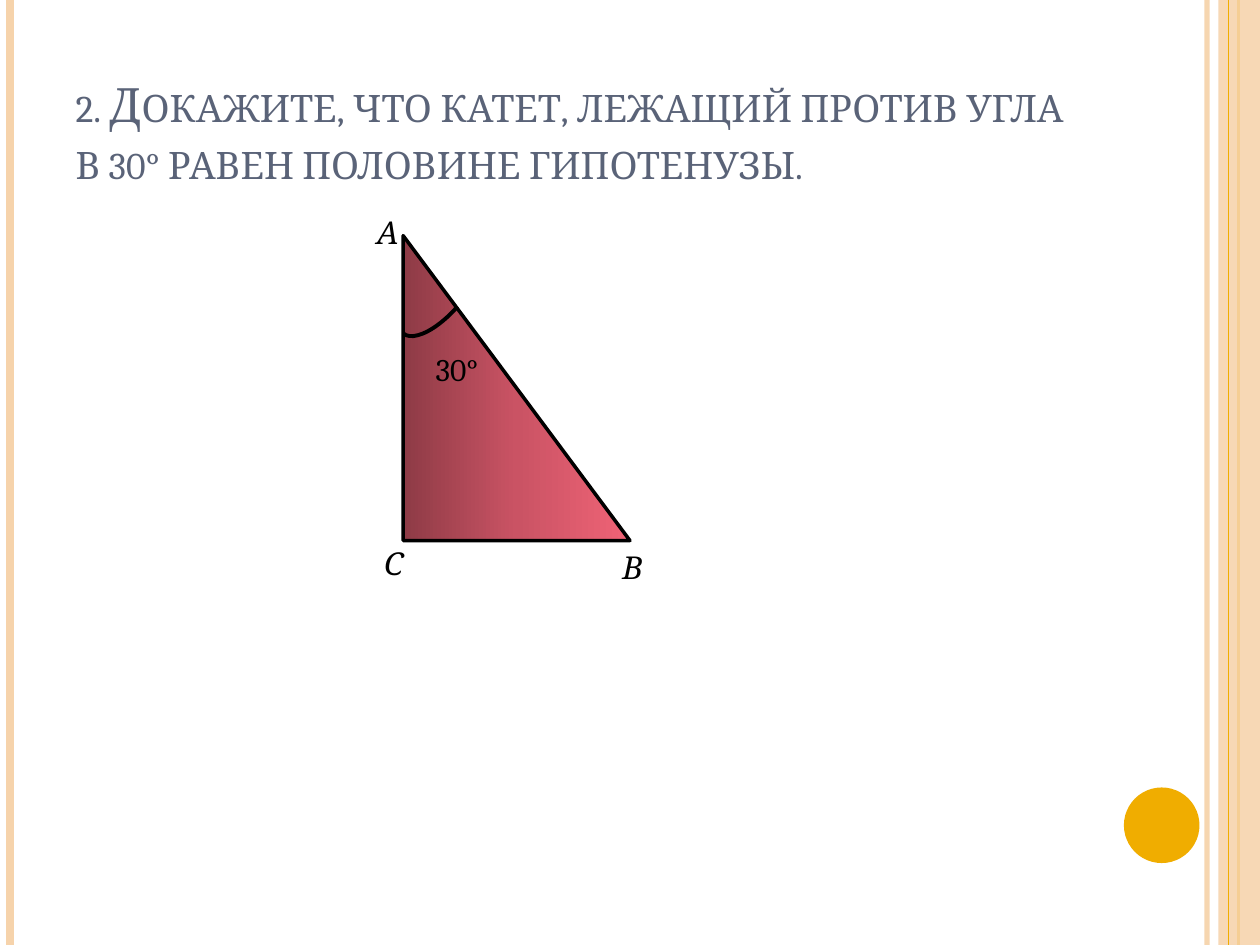
from copy import deepcopy
from dataclasses import dataclass

from lxml import etree
from pptx import Presentation
from pptx.dml.color import RGBColor
from pptx.enum.shapes import MSO_CONNECTOR, MSO_SHAPE
from pptx.enum.text import MSO_ANCHOR, MSO_AUTO_SIZE, PP_ALIGN
from pptx.oxml.ns import qn
from pptx.util import Inches, Pt

STRAIGHT = MSO_CONNECTOR.STRAIGHT
RECTANGLE, OVAL = MSO_SHAPE.RECTANGLE, MSO_SHAPE.OVAL
RIGHT_TRIANGLE, ARC = MSO_SHAPE.RIGHT_TRIANGLE, MSO_SHAPE.ARC
BOTTOM, LEFT = MSO_ANCHOR.BOTTOM, PP_ALIGN.LEFT
NO_FIT, GROW = MSO_AUTO_SIZE.NONE, MSO_AUTO_SIZE.SHAPE_TO_FIT_TEXT
TITLE_ONLY = 5
WIDTH, HEIGHT = 10, 7.5


@dataclass(frozen=True)
class Theme:
    """Colours, font and type sizes of the slide."""
    peach: str = "F6D3AB"
    amber: str = "F0AD00"
    slate: str = "5A6378"
    ink: str = "000000"
    triangle: tuple = ((0, "8E3B46"), (0.5, "CA5364"), (1, "EF6376"))
    font: str = "Cambria"
    title_size: int = 27
    label_size: int = 18


THEME = Theme()

STRIPES = [
    (9.58, THEME.peach, 3, 93),
    (0.08, THEME.peach, 4.5, 100),
    (9.83, THEME.amber, 1.5, 100),
]
INNER_STRIPE = (9.75, THEME.amber, 0.75, 100)

LABELS = [
    ("С", 2.95, 4.27, 0.55, True),
    ("В", 4.84, 4.3, 0.55, True),
    ("А", 2.89, 1.64, 0.55, True),
    ("30°", 3.36, 2.73, 0.86, False),
]


def apply(target, values):
    """Set each named attribute on the target."""
    for name, value in values.items():
        setattr(target, name, value)


def style_run(run, size, color, italic=False):
    """Give a run its font, size, colour and slant."""
    apply(run.font, {"name": THEME.font, "size": Pt(size), "italic": italic})
    run.font.color.rgb = RGBColor.from_string(color)


def set_opacity(element, percent):
    """Make the colour inside an element partly transparent."""
    if percent < 100:
        color = next(element.iter(qn("a:srgbClr")))
        etree.SubElement(color, qn("a:alpha")).set("val", str(percent * 1000))


def set_outline(line, color, width):
    """Give a line its colour and width."""
    line.color.rgb = RGBColor.from_string(color)
    line.width = Pt(width)


def add_stripe(slide, x, color, width, opacity):
    """Draw a vertical line over the full slide height."""
    stripe = slide.shapes.add_connector(
        STRAIGHT, Inches(x), 0, Inches(x), Inches(HEIGHT))
    set_outline(stripe.line, color, width)
    properties = stripe._element.spPr
    set_opacity(properties, opacity)
    etree.SubElement(properties, qn("a:effectLst"))


def add_plain_shape(slide, kind, box):
    """Add a preset shape without shadow."""
    shape = slide.shapes.add_shape(kind, *map(Inches, box))
    shape.shadow.inherit = False
    return shape


def add_solid(slide, kind, box, color, opacity=100):
    """Add a filled shape without outline."""
    solid = add_plain_shape(slide, kind, box)
    solid.fill.solid()
    solid.fill.fore_color.rgb = RGBColor.from_string(color)
    set_opacity(solid._element.spPr, opacity)
    solid.line.fill.background()


def add_triangle(slide, box):
    """Add the right triangle with its horizontal gradient."""
    triangle = add_plain_shape(slide, RIGHT_TRIANGLE, box)
    fill = triangle.fill
    fill.gradient()
    fill.gradient_angle = 0
    stop_list = next(triangle._element.iter(qn("a:gsLst")))
    stop_list.append(deepcopy(stop_list[-1]))
    for stop, (position, color) in zip(fill.gradient_stops, THEME.triangle):
        stop.position = position
        stop.color.rgb = RGBColor.from_string(color)
    set_outline(triangle.line, THEME.ink, 2)


def add_angle_mark(slide, box):
    """Add the arc that marks the angle at the top vertex."""
    mark = add_plain_shape(slide, ARC, box)
    mark.rotation = 129.6
    mark.adjustments[0], mark.adjustments[1] = 167.34, 0
    mark.fill.background()
    set_outline(mark.line, THEME.ink, 2.25)


def add_label(slide, text, left, top, width, italic):
    """Add a vertex or angle label."""
    label = slide.shapes.add_textbox(*map(Inches, (left, top, width, 0.4)))
    apply(label.text_frame, {"word_wrap": True, "auto_size": GROW})
    run = label.text_frame.paragraphs[0].add_run()
    run.text = text
    style_run(run, THEME.label_size, THEME.ink, italic)


def fill_title(slide, text):
    """Place the task in the title placeholder in small capitals."""
    title = slide.shapes.title
    apply(title, {"left": Inches(0.5), "top": Inches(0.3),
                  "width": Inches(8.17), "height": Inches(1.25)})
    apply(title.text_frame, {"vertical_anchor": BOTTOM, "word_wrap": True,
                             "auto_size": NO_FIT})
    paragraph = title.text_frame.paragraphs[0]
    paragraph.alignment = LEFT
    run = paragraph.add_run()
    run.text = text
    style_run(run, THEME.title_size, THEME.slate)
    run.font._element.set("cap", "small")


def main():
    """Build the slide and save it."""
    deck = Presentation()
    apply(deck, {"slide_width": Inches(WIDTH), "slide_height": Inches(HEIGHT)})
    slide = deck.slides.add_slide(deck.slide_layouts[TITLE_ONLY])
    for stripe in STRIPES:
        add_stripe(slide, *stripe)
    add_solid(slide, RECTANGLE, (9.67, 0, 0.33, HEIGHT), THEME.peach, 87)
    add_stripe(slide, *INNER_STRIPE)
    add_solid(slide, OVAL, (8.92, 6.25, 0.6, 0.6), THEME.amber)
    fill_title(slide, "2. Докажите, что катет, лежащий против угла "
                      "в 30° равен половине гипотенузы.")
    add_triangle(slide, (3.2, 1.87, 1.8, 2.42))
    add_angle_mark(slide, (3.03, 2.09, 0.94, 0.39))
    for label in LABELS:
        add_label(slide, *label)
    deck.save("out.pptx")


if __name__ == "__main__":
    main()
